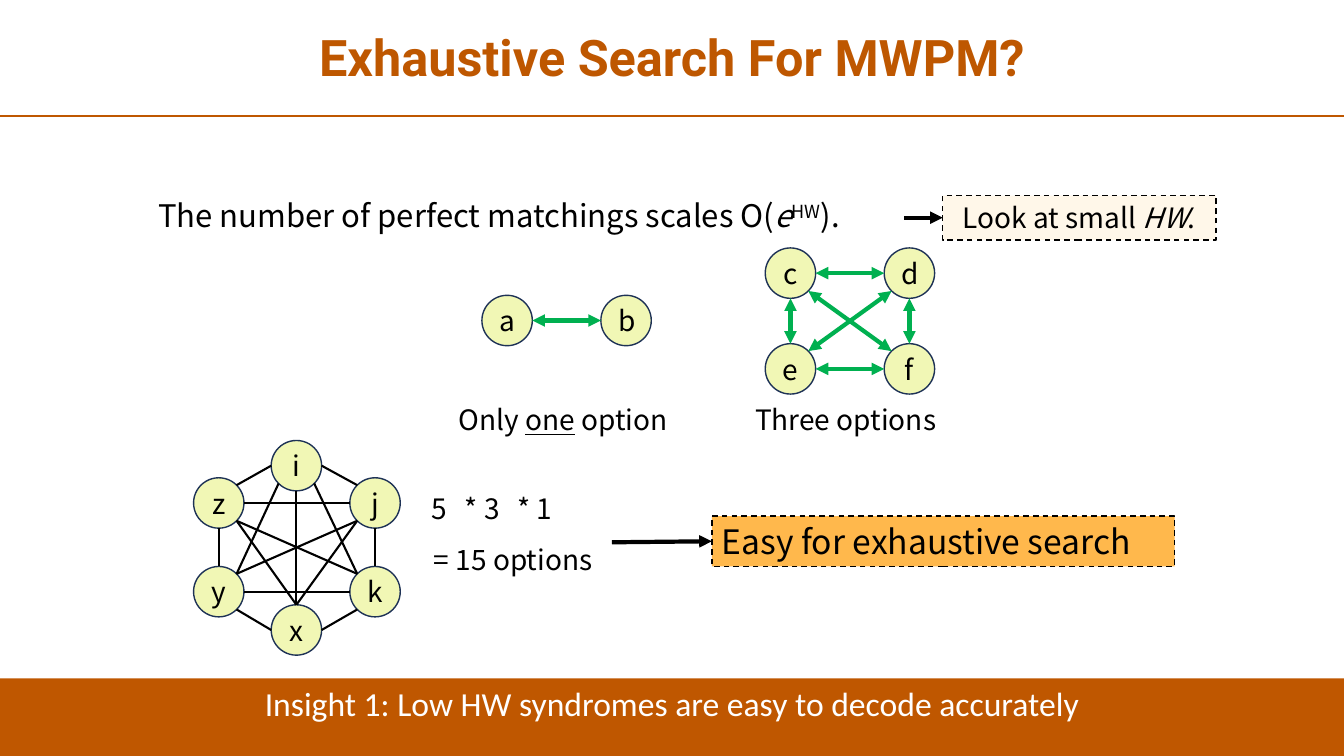
import pptx
import pptx.util
import pptx.dml.color
import pptx.enum.dml
import pptx.enum.shapes
import pptx.enum.text
import pptx.oxml.ns
import lxml.etree

Inches = pptx.util.Inches
SHAPE = pptx.enum.shapes.MSO_SHAPE
ANCHOR = pptx.enum.text.MSO_ANCHOR
ALIGN = pptx.enum.text.PP_ALIGN

COLORS = {
    "title": "BE5700", "orange": "BF5700", "white": "FFFFFF", "black": "000000",
    "cream": "FFF7E9", "amber": "FFB84C", "node": "F1F7B5", "navy": "1E3256",
    "green": "00B050",
}
BODY = "Noto Sans CJK JP"

# Content: text runs are (text, style)
TITLE = [("Exhaustive Search For MWPM?", "b")]
INSIGHT = [("Insight 1: Low HW syndromes are easy to decode accurately", "")]
SCALING = [("The number of perfect matchings scales O(", ""), ("e", "i"),
           ("HW", "sup"), (").", "")]
SMALL_HW = [("Look at small ", ""), ("HW", "i"), (".", "")]
EASY = [("Easy for exhaustive search", "")]
LABELS = [  # runs, box, alignment
    ([("Only ", ""), ("one", "u"), (" option", "")], (4.45, 3.94, 2.37, 0.44), "l"),
    ([("Three options", "")], (7.39, 3.94, 2.08, 0.44), "l"),
    ([("= 15 options", "")], (4.11, 5.33, 1.96, 0.44), "c"),
    ([("5", "")], (4.18, 4.82, 0.35, 0.44), "c"),
    ([("* 3", "")], (4.45, 4.82, 0.67, 0.44), "c"),
    ([("* 1", "")], (4.97, 4.82, 0.67, 0.44), "c"),
]

# Graph nodes by centre; edges join compass points of two nodes
RADIUS = 0.25
NODES = {
    "a": (5.03, 3.18), "b": (6.21, 3.18),
    "c": (7.84, 2.71), "d": (9.02, 2.71), "e": (7.84, 3.66), "f": (9.02, 3.66),
    "i": (2.94, 4.62), "j": (3.72, 4.99), "k": (3.72, 5.87),
    "x": (2.94, 6.25), "y": (2.17, 5.87), "z": (2.17, 4.99),
}
PLAIN_EDGES = [
    "z.NE i.W", "y.N z.S", "y.SE x.W", "k.SW x.E", "j.S k.N", "i.E j.NW",
    "z.SE x.N", "j.SW y.NE", "j.W z.E", "k.NW z.SE", "i.S x.N", "j.SW x.N",
    "i.SW y.NE", "k.W y.E", "k.NW i.SE",
]
MATCH_EDGES = ["a.E b.W", "c.E d.W", "e.E f.W", "c.S e.N", "d.S f.N",
               "c.SE f.NW", "d.SW e.NE"]

prs = pptx.Presentation()
prs.slide_width, prs.slide_height = Inches(13.33), Inches(7.5)
s = prs.slides.add_slide(prs.slide_layouts[6])


def rgb(name):
    return pptx.dml.color.RGBColor.from_string(COLORS[name])


def put_text(sp, runs, size=20, font=BODY, color="black", align="c", anchor="m",
             spacing=None):
    tf = sp.text_frame
    tf.word_wrap = True
    tf.vertical_anchor = ANCHOR.MIDDLE if anchor == "m" else ANCHOR.TOP
    p = tf.paragraphs[0]
    p.alignment = ALIGN.CENTER if align == "c" else ALIGN.LEFT
    if spacing:
        p.line_spacing = spacing
    for text, style in runs:
        r = p.add_run()
        r.text = text
        r.font.size, r.font.name = pptx.util.Pt(size), font
        r.font.color.rgb = rgb(color)
        r.font.bold, r.font.italic = style == "b", style == "i"
        r.font.underline = style == "u"
        rPr = r._r.get_or_add_rPr()
        ea = lxml.etree.SubElement(rPr, pptx.oxml.ns.qn("a:ea"))
        ea.set("typeface", font)
        if style == "sup":
            rPr.set("baseline", "30000")


def add_text(box, runs, **fmt):
    put_text(s.shapes.add_textbox(*map(Inches, box)), runs, **fmt)


def add_box(kind, box, fill, line=None, dash=False):
    sp = s.shapes.add_shape(kind, *map(Inches, box))
    sp.shadow.inherit = False
    sp.fill.solid()
    sp.fill.fore_color.rgb = rgb(fill)
    if line:
        sp.line.color.rgb, sp.line.width = rgb(line), pptx.util.Pt(1)
    else:
        sp.line.fill.background()
    if dash:
        sp.line.dash_style = pptx.enum.dml.MSO_LINE.DASH
    return sp


def add_line(start, end, color="black", width=1.5, heads=()):
    cxn = s.shapes.add_connector(pptx.enum.shapes.MSO_CONNECTOR.STRAIGHT,
                                 *map(Inches, (*start, *end)))
    cxn.line.color.rgb, cxn.line.width = rgb(color), pptx.util.Pt(width)
    ln = cxn.line._get_or_add_ln()
    for head in heads:
        tag = pptx.oxml.ns.qn("a:" + head)
        lxml.etree.SubElement(ln, tag).set("type", "triangle")
    lxml.etree.SubElement(cxn._element.spPr, pptx.oxml.ns.qn("a:effectLst"))


def rim(site):
    node, compass = site.split(".")
    x, y = NODES[node]
    dx = ("E" in compass) - ("W" in compass)
    dy = ("S" in compass) - ("N" in compass)
    reach = RADIUS / (dx * dx + dy * dy) ** 0.5
    return x + dx * reach, y + dy * reach


def add_edges(edges, **fmt):
    for edge in edges:
        add_line(*map(rim, edge.split()), **fmt)


# Title and footer
add_text((0.09, 0.04, 13.15, 1.11), TITLE, size=36, font="Roboto", color="title",
         spacing=0.9)
add_line((0, 1.15), (13.33, 1.15), color="orange")
put_text(add_box(SHAPE.RECTANGLE, (0, 6.73, 13.33, 0.8), "orange"), INSIGHT,
         size=24, font="Calibri", color="white", anchor="t")

# Scaling statement and its consequence
add_text((0.92, 1.86, 8.06, 0.6), SCALING, size=22.2, spacing=0.9)
add_line((8.97, 2.16), (9.35, 2.16), width=3, heads=["tailEnd"])
put_text(add_box(SHAPE.RECTANGLE, (9.35, 1.94, 2.71, 0.44), "cream", "black", True),
         SMALL_HW)

# Graphs
for name, (cx, cy) in NODES.items():
    circle = (cx - RADIUS, cy - RADIUS, 2 * RADIUS, 2 * RADIUS)
    put_text(add_box(SHAPE.OVAL, circle, "node", "navy"), [(name, "")])
add_edges(PLAIN_EDGES)
add_edges(MATCH_EDGES, color="green", width=3, heads=["headEnd", "tailEnd"])

# Option counts
for runs, box, align in LABELS:
    add_text(box, runs, align=align)

# Conclusion
add_line((6.07, 5.38), (7.06, 5.37), width=3, heads=["tailEnd"])
put_text(add_box(SHAPE.RECTANGLE, (7.06, 5.12, 4.59, 0.5), "amber", "black", True),
         EASY, size=24, align="l")

prs.save("out.pptx")
